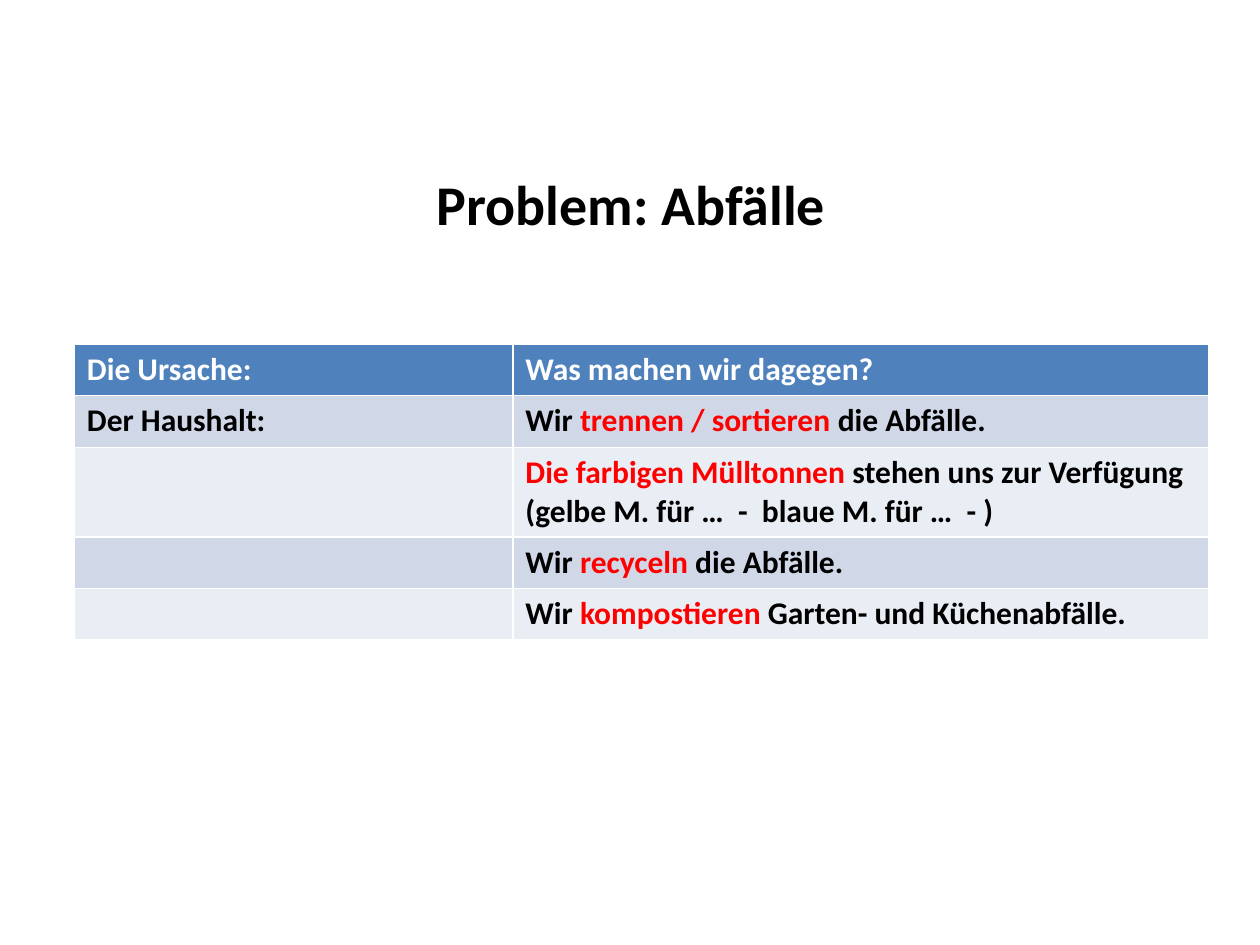
from pptx import Presentation
from pptx.dml.color import RGBColor
from pptx.enum.text import MSO_ANCHOR, PP_ALIGN
from pptx.util import Inches, Pt

BLACK = RGBColor(0x00, 0x00, 0x00)
WHITE = RGBColor(0xFF, 0xFF, 0xFF)
RED = RGBColor(0xFF, 0x00, 0x00)
HEADER_BLUE = RGBColor(0x4F, 0x81, 0xBD)
BANDS = [RGBColor(0xD0, 0xD8, 0xE8), RGBColor(0xE9, 0xED, 0xF4)]

HEADING = "Problem: Abfälle"
HEADERS = ["Die Ursache:", "Was machen wir dagegen?"]
MEASURES = [
    ("Der Haushalt:", [("Wir ", BLACK), ("trennen / sortieren ", RED), ("die Abfälle.", BLACK)]),
    ("", [("Die farbigen Mülltonnen ", RED),
          ("stehen uns zur Verfügung (gelbe M. für …  -  blaue M. für …  - )", BLACK)]),
    ("", [("Wir ", BLACK), ("recyceln", RED), (" die Abfälle.", BLACK)]),
    ("", [("Wir ", BLACK), ("kompostieren", RED), (" Garten- und Küchenabfälle.", BLACK)]),
]
COLUMN_WIDTHS = [3.48, 5.52]
ROW_HEIGHT = 0.41


def write(frame, parts, size=18, align=PP_ALIGN.LEFT):
    paragraph = frame.paragraphs[0]
    paragraph.alignment = align
    for words, color in parts:
        if not words:
            continue
        run = paragraph.add_run()
        run.text = words
        run.font.name = "Calibri"
        run.font.size = Pt(size)
        run.font.bold = True
        run.font.color.rgb = color


def main():
    deck = Presentation()
    deck.slide_width, deck.slide_height = Inches(10), Inches(7.5)
    slide = deck.slides.add_slide(deck.slide_layouts[5])

    heading = slide.shapes.title
    heading.left, heading.top = Inches(0.51), Inches(0.99)
    heading.width, heading.height = Inches(9), Inches(1.25)
    heading.text_frame.vertical_anchor = MSO_ANCHOR.MIDDLE
    write(heading.text_frame, [(HEADING, BLACK)], size=32, align=PP_ALIGN.CENTER)

    rows = [([(header, WHITE)] for header in HEADERS)]
    rows += [([(cause, BLACK)], measure) for cause, measure in MEASURES]
    measures = slide.shapes.add_table(
        len(rows), len(HEADERS), Inches(0.59), Inches(2.73),
        Inches(sum(COLUMN_WIDTHS)), Inches(ROW_HEIGHT * len(rows))).table
    for column, width in zip(measures.columns, COLUMN_WIDTHS):
        column.width = Inches(width)

    for index, (row, contents) in enumerate(zip(measures.rows, rows)):
        row.height = Inches(ROW_HEIGHT)
        for cell, parts in zip(row.cells, contents):
            cell.fill.solid()
            cell.fill.fore_color.rgb = BANDS[(index - 1) % 2] if index else HEADER_BLUE
            write(cell.text_frame, parts)

    deck.save("out.pptx")


if __name__ == "__main__":
    main()
